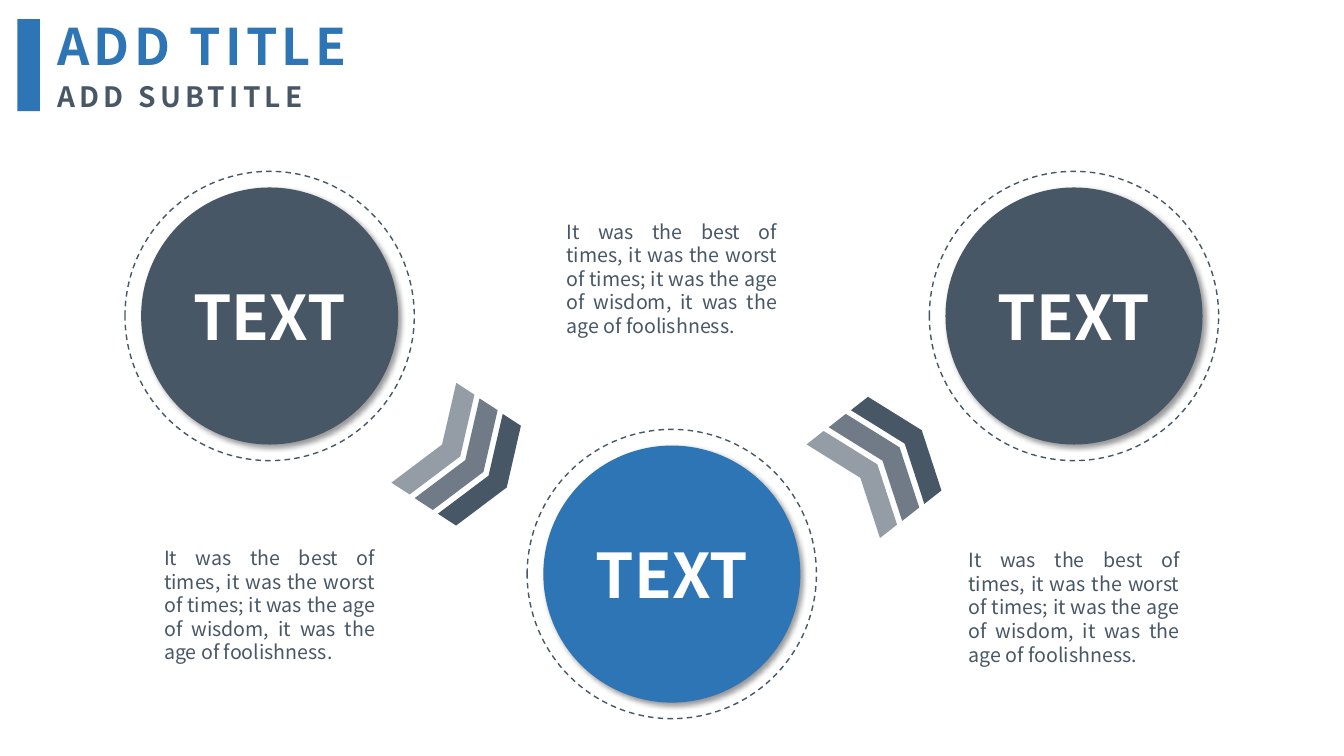
from lxml import etree
from pptx import Presentation
from pptx.dml.color import RGBColor
from pptx.enum.dml import MSO_LINE
from pptx.enum.shapes import MSO_SHAPE
from pptx.enum.text import MSO_ANCHOR, MSO_AUTO_SIZE, PP_ALIGN
from pptx.oxml.ns import qn
from pptx.util import Pt

OVAL, RECT, ARROW = MSO_SHAPE.OVAL, MSO_SHAPE.RECTANGLE, MSO_SHAPE.CHEVRON
LEFT, CENTER, JUSTIFY = PP_ALIGN.LEFT, PP_ALIGN.CENTER, PP_ALIGN.JUSTIFY
TOP, MIDDLE = MSO_ANCHOR.TOP, MSO_ANCHOR.MIDDLE
DASH, FIXED = MSO_LINE.DASH, MSO_AUTO_SIZE.NONE

FONT = "Noto Sans CJK SC"
COLORS = {"slate": "485766", "blue": "2E75B6", "white": "FFFFFF", "black": "000000"}
QUOTE = ("It was the best of times, it was the worst of times; "
         "it was the age of wisdom, it was the age of foolishness.")

RING, DISC = 206.64, 183.6
NOTE_W, NOTE_H = 164.9, 92.2
# Centre x, centre y, disc colour, top of the note
STAGES = [(192.6, 225.72, "slate", 386.6),
          (479.88, 410.04, "blue", 153.4),
          (767.16, 225.72, "slate", 388.1)]
# Left, top, step across, step down, rotation
TRAILS = [(300.24, 275.04, 16.6, 11.1, 33),
          (599.04, 298.8, 15.84, -12.2, 321.9)]
ALPHAS = [58, 78, 100]


def color(name):
    return RGBColor.from_string(COLORS[name])


def write(shape, text, size, tone, align, bold=False, anchor=TOP):
    frame = shape.text_frame
    frame.word_wrap = True
    frame.auto_size = FIXED
    frame.vertical_anchor = anchor
    frame.text = text
    para = frame.paragraphs[0]
    para.alignment = align
    para.space_before = Pt(0)
    font = para.font
    font.name, font.size, font.bold = FONT, Pt(size), bold
    font.color.rgb = color(tone)
    return para


def add_form(slide, kind, box, fill=None):
    form = slide.shapes.add_shape(kind, *map(Pt, box))
    form.shadow.inherit = False
    if fill:
        form.fill.solid()
        form.fill.fore_color.rgb = color(fill)
        form.line.fill.background()
    else:
        form.fill.background()
    return form


def set_alpha(node, percent):
    etree.SubElement(node, qn("a:alpha"), val=str(percent * 1000))


def cast_shadow(form):
    effects = form._element.spPr.find(qn("a:effectLst"))
    shade = etree.SubElement(effects, qn("a:outerShdw"), blurRad=str(Pt(4)),
                             dist=str(Pt(3)), dir=str(45 * 60000),
                             algn="tl", rotWithShape="0")
    tint = etree.SubElement(shade, qn("a:srgbClr"), val=COLORS["black"])
    set_alpha(tint, 40)


def add_stage(slide, x, y, tone, top):
    """Draw a dashed ring, its labelled disc and the note in the same column."""
    ring = add_form(slide, OVAL, (x - RING / 2, y - RING / 2, RING, RING))
    ring.line.color.rgb = color("slate")
    ring.line.width = Pt(1)
    ring.line.dash_style = DASH
    disc = add_form(slide, OVAL, (x - DISC / 2, y - DISC / 2, DISC, DISC), tone)
    cast_shadow(disc)
    write(disc, "TEXT", 44, "white", CENTER, True, MIDDLE)
    note = slide.shapes.add_textbox(Pt(x - NOTE_W / 2), Pt(top), Pt(NOTE_W), Pt(NOTE_H))
    write(note, QUOTE, 14, "slate", JUSTIFY)


def add_trail(slide, x, y, across, down, turn):
    """Draw three chevrons that grow darker along their path."""
    for i, alpha in enumerate(ALPHAS):
        arrow = add_form(slide, ARROW, (x + i * across, y + i * down, 31, 85), "slate")
        arrow.rotation = turn
        if alpha < 100:
            set_alpha(arrow._element.spPr.find(".//" + qn("a:srgbClr")), alpha)


def set_head(holder, text, box, size, tone):
    holder.left, holder.top, holder.width, holder.height = map(Pt, box)
    para = write(holder, text, size, tone, LEFT, True)
    para.runs[0]._r.get_or_add_rPr().set("spc", "300")


def main():
    deck = Presentation()
    deck.slide_width, deck.slide_height = Pt(960), Pt(540)
    slide = deck.slides.add_slide(deck.slide_layouts[0])
    for stage in STAGES:
        add_stage(slide, *stage)
    for trail in TRAILS:
        add_trail(slide, *trail)
    title, sub = slide.placeholders
    set_head(title, "ADD TITLE", (33.84, 7.2, 249.8, 51.1), 36, "blue")
    set_head(sub, "ADD SUBTITLE", (33.84, 53.3, 206.6, 31.7), 20, "slate")
    add_form(slide, RECT, (12.5, 13.7, 16, 65.8), "blue")
    deck.save("out.pptx")


if __name__ == "__main__":
    main()
